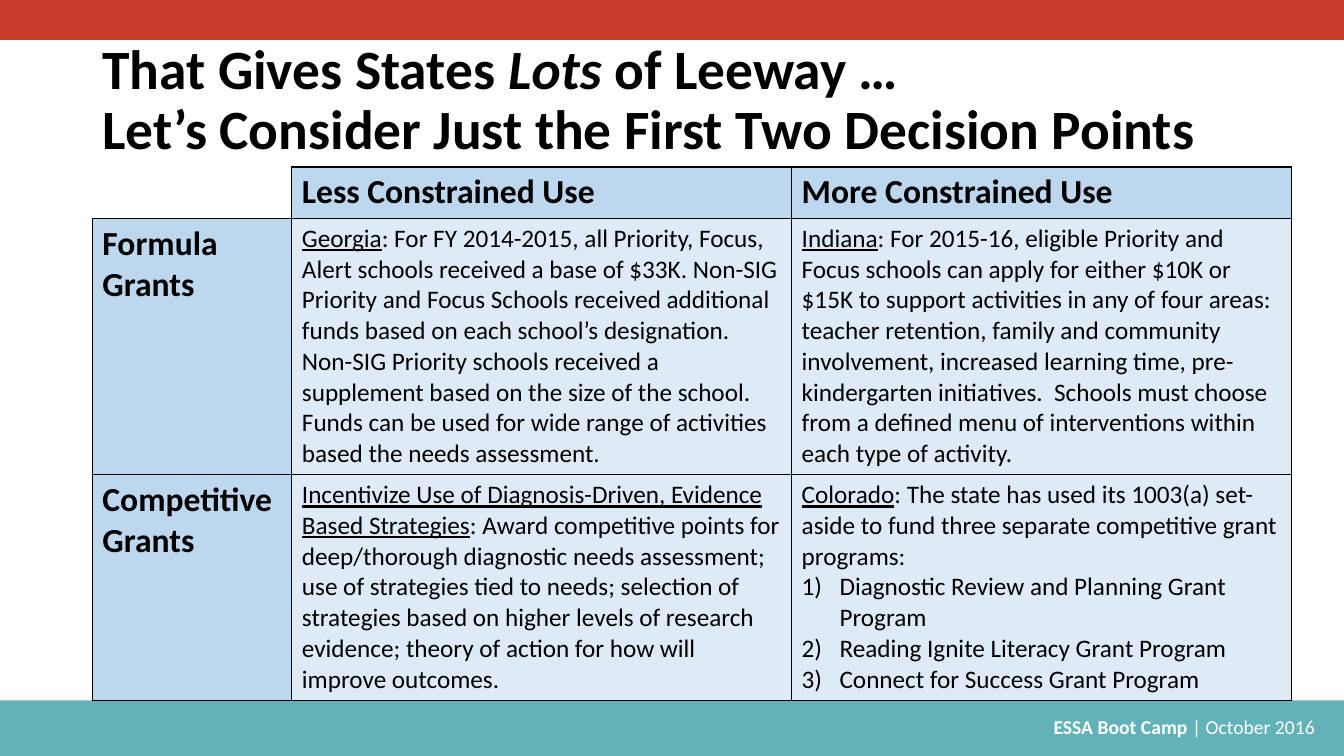
"""Build the slide comparing formula and competitive grant decisions."""
from lxml.etree import SubElement
from pptx import Presentation
from pptx.dml.color import RGBColor
from pptx.enum.shapes import MSO_SHAPE
from pptx.enum.text import MSO_ANCHOR, PP_ALIGN
from pptx.oxml import parse_xml
from pptx.oxml.ns import nsdecls, qn
from pptx.util import Pt

PX = 9525
THEME = {
    "font": "Calibri",
    "black": RGBColor.from_string("000000"),
    "white": RGBColor.from_string("FFFFFF"),
    "red": RGBColor.from_string("C83C2A"),
    "teal": RGBColor.from_string("63B2B8"),
    "heading_fill": RGBColor.from_string("BDD7EE"),
    "body_fill": RGBColor.from_string("DEEBF7"),
    "title_size": Pt(39.6),
    "heading_size": Pt(24),
    "body_size": Pt(18),
    "footer_size": Pt(14),
}


def write_runs(paragraph, runs, size, colour="black", bold=False):
    """Fill a paragraph with (text, emphasis) runs."""
    font = paragraph.font
    font.name, font.size, font.bold = THEME["font"], THEME[size], bold
    font.color.rgb = THEME[colour]
    for text, emphasis in runs:
        if text == "\n":
            paragraph.add_line_break()
            continue
        run = paragraph.add_run()
        run.text = text
        if emphasis:
            setattr(run.font, emphasis, True)


def add_text_box(slide, left, top, width, height):
    """Add a wrapping text box, vertically centred, and return its paragraph."""
    box = slide.shapes.add_textbox(left * PX, top * PX, width * PX, height * PX)
    box.text_frame.word_wrap = True
    box.text_frame.vertical_anchor = MSO_ANCHOR.MIDDLE
    return box.text_frame.paragraphs[0]


presentation = Presentation()
presentation.slide_width, presentation.slide_height = 1280 * PX, 720 * PX
slide = presentation.slides.add_slide(presentation.slide_layouts[6])

for top, height, colour in [(667, 53, "teal"), (0, 38, "red")]:
    band = slide.shapes.add_shape(MSO_SHAPE.RECTANGLE, 0, top * PX, 1280 * PX, height * PX)
    band.shadow.inherit = False
    band.fill.solid()
    band.fill.fore_color.rgb = THEME[colour]
    band.line.fill.background()

footer = add_text_box(slide, 461, 676, 805, 33)
footer.alignment = PP_ALIGN.RIGHT
write_runs(footer, [("ESSA Boot Camp ", "bold"), ("| October 2016 ", None)], "footer_size", "white")

title = add_text_box(slide, 88, 27, 1104, 139)
title.line_spacing = 0.9
title_runs = [
    ("That Gives States ", None), ("Lots", "italic"), (" of Leeway … ", None), ("\n", None),
    ("Let’s Consider Just the First Two Decision Points", None),
]
write_runs(title, title_runs, "title_size", bold=True)

GRANTS = [
    [[], ["Less Constrained Use"], ["More Constrained Use"]],
    [
        ["Formula Grants"],
        [("Georgia", ": For FY 2014-2015, all Priority, Focus, Alert schools received a base of $33K. "
          "Non-SIG Priority and Focus Schools received additional funds based on each school’s "
          "designation. Non-SIG Priority schools received a supplement based on the size of the "
          "school. Funds can be used for wide range of activities based the needs assessment.")],
        [("Indiana", ": For 2015-16, eligible Priority and Focus schools can apply for either $10K or "
          "$15K to support activities in any of four areas: teacher retention, family and community "
          "involvement, increased learning time, pre-kindergarten initiatives.  Schools must choose "
          "from a defined menu of interventions within each type of activity.")],
    ],
    [
        ["Competitive", "Grants"],
        [("Incentivize Use of Diagnosis-Driven, Evidence Based Strategies",
          ": Award competitive points for deep/thorough diagnostic needs assessment; use of "
          "strategies tied to needs; selection of strategies based on higher levels of research "
          "evidence; theory of action for how will improve outcomes.")],
        [("Colorado", ": The state has used its 1003(a) set-aside to fund three separate competitive "
          "grant programs:"),
         "Diagnostic Review and Planning Grant Program",
         "Reading Ignite Literacy Grant Program",
         "Connect for Success Grant Program"],
    ],
]
COLUMN_WIDTHS = [190, 476, 476]
ROW_HEIGHTS = [49, 244, 215]

table = slide.shapes.add_table(
    3, 3, 88 * PX, 159 * PX, sum(COLUMN_WIDTHS) * PX, sum(ROW_HEIGHTS) * PX).table
table.first_row = table.horz_banding = False
for column, width in zip(table.columns, COLUMN_WIDTHS):
    column.width = width * PX
for row, height in zip(table.rows, ROW_HEIGHTS):
    row.height = height * PX

for row_index, row_content in enumerate(GRANTS):
    for column_index, entries in enumerate(row_content):
        cell = table.cell(row_index, column_index)
        heading = row_index == 0 or column_index == 0
        if entries:
            cell.fill.solid()
            cell.fill.fore_color.rgb = THEME["heading_fill" if heading else "body_fill"]
        else:
            cell.fill.background()

        sides = ["lnL", "lnR", "lnT", "lnB"] if entries else ["lnR", "lnB"]
        for position, side in enumerate(sides):
            border = parse_xml(
                f'<a:{side} {nsdecls("a")} w="{Pt(1)}"><a:solidFill>'
                f'<a:srgbClr val="{THEME["black"]}"/></a:solidFill></a:{side}>')
            cell._tc.get_or_add_tcPr().insert(position, border)

        for entry_index, entry in enumerate(entries):
            frame = cell.text_frame
            paragraph = frame.add_paragraph() if entry_index else frame.paragraphs[0]
            if heading:
                write_runs(paragraph, [(entry, None)], "heading_size", bold=True)
            elif isinstance(entry, tuple):
                write_runs(paragraph, [(entry[0], "underline"), (entry[1], None)], "body_size")
            else:
                properties = paragraph._p.get_or_add_pPr()
                properties.set("marL", str(36 * PX))
                properties.set("indent", str(-36 * PX))
                SubElement(properties, qn("a:buAutoNum"), type="arabicParenR")
                write_runs(paragraph, [(entry, None)], "body_size")

presentation.save("out.pptx")
